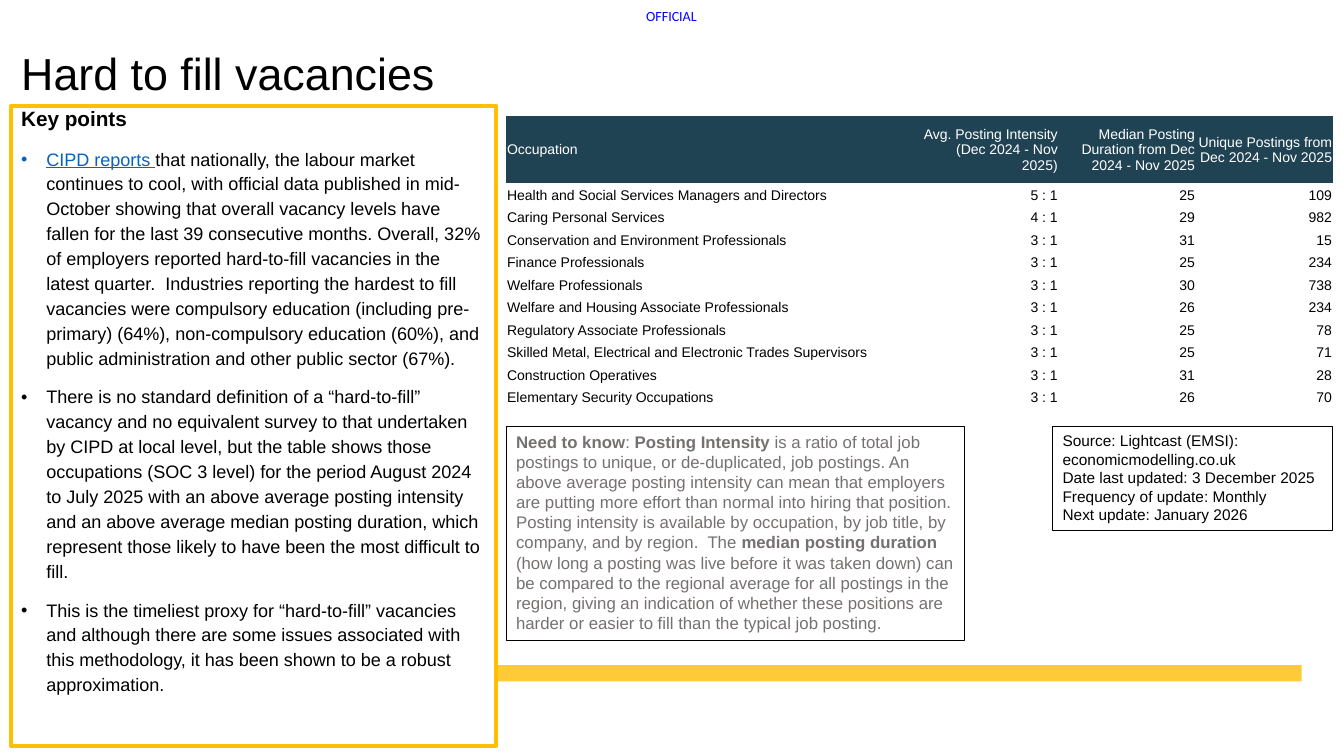
from lxml.etree import SubElement
from pptx import Presentation
from pptx.dml.color import RGBColor
from pptx.enum.shapes import MSO_SHAPE
from pptx.enum.text import MSO_ANCHOR, MSO_AUTO_SIZE, PP_ALIGN
from pptx.oxml.ns import qn
from pptx.util import Inches, Pt

# Content: rich text is a list of (text, style) pairs
TITLE = "Hard to fill vacancies"
MARKING = "OFFICIAL"
KEY_HEADING = "Key points"
KEY_POINTS = [
    [("CIPD reports ", "link"),
     ("that nationally, the labour market continues to cool, with official data published in "
      "mid-October showing that overall vacancy levels have fallen for the last 39 consecutive "
      "months. Overall, 32% of employers reported hard-to-fill vacancies in the latest quarter.  "
      "Industries reporting the hardest to fill vacancies were compulsory education (including "
      "pre-primary) (64%), non-compulsory education (60%), and public administration and other "
      "public sector (67%).", "")],
    [("There is no standard definition of a “hard-to-fill” vacancy and no equivalent survey to "
      "that undertaken by CIPD at local level, but the table shows those occupations (SOC 3 "
      "level) for the period August 2024 to July 2025 with an above average posting intensity "
      "and an above average median posting duration, which represent those likely to have been "
      "the most difficult to fill.", "")],
    [("This is the timeliest proxy for “hard-to-fill” vacancies and although there are some "
      "issues associated with this methodology, it has been shown to be a robust "
      "approximation.", "")],
]
OCCUPATIONS = [
    ("Occupation", "Avg. Posting Intensity (Dec 2024 - Nov 2025)",
     "Median Posting Duration from Dec 2024 - Nov 2025",
     "Unique Postings from Dec 2024 - Nov 2025"),
    ("Health and Social Services Managers and Directors", "5 : 1", "25", "109"),
    ("Caring Personal Services", "4 : 1", "29", "982"),
    ("Conservation and Environment Professionals", "3 : 1", "31", "15"),
    ("Finance Professionals", "3 : 1", "25", "234"),
    ("Welfare Professionals", "3 : 1", "30", "738"),
    ("Welfare and Housing Associate Professionals", "3 : 1", "26", "234"),
    ("Regulatory Associate Professionals", "3 : 1", "25", "78"),
    ("Skilled Metal, Electrical and Electronic Trades Supervisors", "3 : 1", "25", "71"),
    ("Construction Operatives", "3 : 1", "31", "28"),
    ("Elementary Security Occupations", "3 : 1", "26", "70"),
]
SOURCE = [[(line, "")] for line in (
    "Source: Lightcast (EMSI): economicmodelling.co.uk",
    "Date last updated: 3 December 2025",
    "Frequency of update: Monthly",
    "Next update: January 2026",
)]
NEED_TO_KNOW = [[
    ("Need to know", "bold"), (": ", ""), ("Posting Intensity ", "bold"),
    ("is a ratio of total job postings to unique, or de-duplicated, job postings. An above "
     "average posting intensity can mean that employers are putting more effort than normal "
     "into hiring that position. Posting intensity is available by occupation, by job title, "
     "by company, and by region.  The ", ""),
    ("median posting duration ", "bold"),
    ("(how long a posting was live before it was taken down) can be compared to the regional "
     "average for all postings in the region, giving an indication of whether these positions "
     "are harder or easier to fill than the typical job posting.", ""),
]]

# Grid, in inches: a left panel and a right column
WIDTH, HEIGHT = 13.33, 7.5
LEFT, PANEL_TOP, PANEL_WIDTH = 0.11, 1.05, 4.81
RIGHT, RIGHT_WIDTH = 5.02, 8.2
TABLE_TOP, HEADER_HEIGHT, ROW_HEIGHT = 1.15, 0.67, 0.224
NUMBER_WIDTH = 1.36
NOTES_TOP, SOURCE_WIDTH = 4.23, 2.78
INDENT = 0.25
NO_STYLE = "{2D5ABB26-0587-4C30-8999-92F81FD0307C}"


def color(value):
    return RGBColor.from_string(value)


def place(shape, left, top, width, height):
    shape.left, shape.top = Inches(left), Inches(top)
    shape.width, shape.height = Inches(width), Inches(height)


def set_font(font, size, value, name="Arial"):
    font.size, font.name = Pt(size), name
    font.color.rgb = color(value)


def add_runs(paragraph, pieces, size, value):
    for text, style in pieces:
        run = paragraph.add_run()
        run.text = text
        set_font(run.font, size, "0563C1" if style == "link" else value)
        run.font.bold = style == "bold"
        run.font.underline = style == "link"


def outline(shape, value, weight):
    shape.fill.solid()
    shape.fill.fore_color.rgb = color("FFFFFF")
    shape.line.color.rgb = color(value)
    shape.line.width = Pt(weight)


def add_note(shapes, bounds, paragraphs, size, value):
    box = shapes.add_textbox(*map(Inches, bounds))
    outline(box, "000000", 0.75)
    frame = box.text_frame
    frame.word_wrap = True
    for index, pieces in enumerate(paragraphs):
        paragraph = frame.add_paragraph() if index else frame.paragraphs[0]
        add_runs(paragraph, pieces, size, value)


def add_bullet(paragraph):
    properties = paragraph._p.get_or_add_pPr()
    properties.set("marL", str(Inches(INDENT)))
    properties.set("indent", str(-Inches(INDENT)))
    SubElement(properties, qn("a:buFont")).set("typeface", "Arial")
    SubElement(properties, qn("a:buChar")).set("char", "•")


def add_background(slide):
    bar = slide.shapes.add_shape(MSO_SHAPE.RECTANGLE, *map(Inches, (0.31, 6.6, 12.6, 0.16)))
    bar.shadow.inherit = False
    bar.fill.solid()
    bar.fill.fore_color.rgb = color("FFCA38")
    bar.line.fill.background()
    marking = slide.shapes.add_textbox(*map(Inches, (6.41, 0.07, 0.53, 0.17)))
    frame = marking.text_frame
    frame.margin_left = frame.margin_right = frame.margin_top = frame.margin_bottom = 0
    frame.word_wrap = False
    frame.text = MARKING
    set_font(frame.paragraphs[0].runs[0].font, 10, "0000FF", "Calibri")
    # Send both behind the placeholders
    tree = slide.shapes._spTree
    for position, shape in enumerate((bar, marking), start=2):
        tree.insert(position, shape._element)


def fill_title(title):
    place(title, LEFT, 0.32, 12.6, 0.87)
    frame = title.text_frame
    frame.text = TITLE
    frame.auto_size = MSO_AUTO_SIZE.NONE
    frame.vertical_anchor = MSO_ANCHOR.MIDDLE
    paragraph = frame.paragraphs[0]
    paragraph.alignment, paragraph.line_spacing = PP_ALIGN.LEFT, 0.9
    set_font(paragraph.runs[0].font, 32, "000000")


def fill_key_points(body):
    place(body, LEFT, PANEL_TOP, PANEL_WIDTH, 6.35)
    outline(body, "FFC000", 3)
    frame = body.text_frame
    frame.auto_size = MSO_AUTO_SIZE.NONE
    heading = frame.paragraphs[0]
    heading.line_spacing, heading.space_before = 0.8, Pt(0)
    properties = heading._p.get_or_add_pPr()
    properties.set("marL", "0")
    properties.set("indent", "0")
    SubElement(properties, qn("a:buNone"))
    add_runs(heading, [(KEY_HEADING, "bold")], 14.8, "000000")
    for pieces in KEY_POINTS:
        paragraph = frame.add_paragraph()
        paragraph.line_spacing, paragraph.space_before = 1.15, Pt(10)
        add_bullet(paragraph)
        add_runs(paragraph, pieces, 12.9, "000000")


def add_occupations(shapes):
    count, columns = len(OCCUPATIONS), len(OCCUPATIONS[0])
    height = HEADER_HEIGHT + ROW_HEIGHT * (count - 1)
    frame = shapes.add_table(count, columns, *map(Inches, (RIGHT, TABLE_TOP, RIGHT_WIDTH, height)))
    table = frame.table
    table.first_row = table.horz_banding = False
    table._tbl.tblPr.find(qn("a:tableStyleId")).text = NO_STYLE
    for index, column in enumerate(table.columns):
        name_width = RIGHT_WIDTH - NUMBER_WIDTH * (columns - 1)
        column.width = Inches(NUMBER_WIDTH if index else name_width)
    for row_index, values in enumerate(OCCUPATIONS):
        table.rows[row_index].height = Inches(ROW_HEIGHT if row_index else HEADER_HEIGHT)
        for column_index, value in enumerate(values):
            cell = table.cell(row_index, column_index)
            cell.text = value
            cell.vertical_anchor = MSO_ANCHOR.MIDDLE
            cell.margin_left = cell.margin_right = cell.margin_top = Inches(0.01)
            cell.margin_bottom = 0
            if row_index:
                cell.fill.background()
            else:
                cell.fill.solid()
                cell.fill.fore_color.rgb = color("204354")
            paragraph = cell.text_frame.paragraphs[0]
            paragraph.alignment = PP_ALIGN.RIGHT if column_index else PP_ALIGN.LEFT
            set_font(paragraph.runs[0].font, 10, "000000" if row_index else "FFFFFF")


def main():
    presentation = Presentation()
    presentation.slide_width, presentation.slide_height = Inches(WIDTH), Inches(HEIGHT)
    slide = presentation.slides.add_slide(presentation.slide_layouts[1])
    add_background(slide)
    fill_title(slide.shapes.title)
    fill_key_points(slide.placeholders[1])
    add_occupations(slide.shapes)
    source_left = RIGHT + RIGHT_WIDTH - SOURCE_WIDTH
    add_note(slide.shapes, (source_left, NOTES_TOP, SOURCE_WIDTH, 1.03), SOURCE, 11, "000000")
    add_note(slide.shapes, (RIGHT, NOTES_TOP, 4.55, 2.12), NEED_TO_KNOW, 12, "767171")
    presentation.save("out.pptx")


if __name__ == "__main__":
    main()
